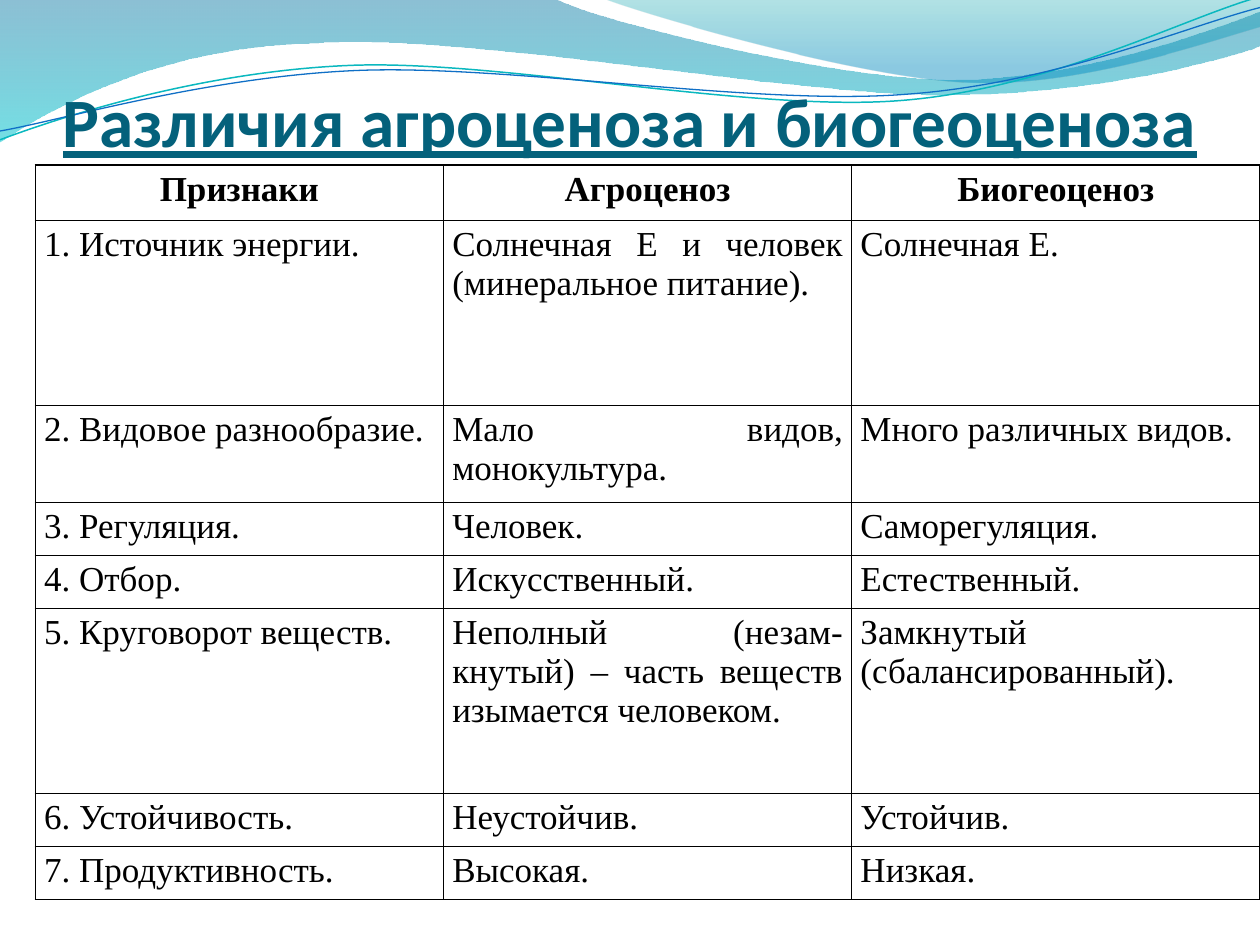
from lxml.etree import SubElement
from pptx import Presentation
from pptx.dml.color import RGBColor
from pptx.enum.text import MSO_ANCHOR, PP_ALIGN
from pptx.oxml.ns import qn
from pptx.util import Inches, Pt

# Content
TITLE = "Различия агроценоза и биогеоценоза"
HEADER = ("Признаки", "Агроценоз", "Биогеоценоз")
ROWS = [
    ("1. Источник энергии.", "Солнечная Е и человек (минеральное питание).", "Солнечная Е."),
    ("2. Видовое разнообразие.", "Мало видов, монокультура.", "Много различных видов."),
    ("3. Регуляция.", "Человек.", "Саморегуляция."),
    ("4. Отбор.", "Искусственный.", "Естественный."),
    ("5. Круговорот веществ.",
     "Неполный (незам-кнутый) – часть веществ изымается человеком.",
     "Замкнутый (сбалансированный)."),
    ("6. Устойчивость.", "Неустойчив.", "Устойчив."),
    ("7. Продуктивность.", "Высокая.", "Низкая."),
]
LEFT_ALIGNED = "5. Круговорот веществ."

# Layout in inches
WIDTH, HEIGHT = 10, 7.5
TABLE_LEFT, TABLE_TOP = 0.28, 1.31
ROW_HEIGHTS = (0.44, 1.47, 0.77, 0.42, 0.42, 1.47, 0.42, 0.42)

# Waves: a step of one point is straight, a step of three is a Bézier curve
WAVES = [
    {"start": (0, 0),
     "steps": [[(4.4, -0.01)],
               [(4.76, 0.17), (6.64, 0.63), (7.58, 0.63)],
               [(8.53, 0.63), (9.58, 0.26), (10, 0.09)],
               [(10.01, 0.36)],
               [(9.83, 0.44), (8.7, 0.76), (7.46, 0.75)],
               [(6.22, 0.75), (3.82, 0.28), (2.57, 0.34)],
               [(1.29, 0.36), (0.46, 0.83), (-0.01, 1.13)],
               [(0, 0)]],
     "stops": [(0, "0074A1", 45), (100, "00C6CF", 55)]},
    {"start": (4.79, -0.01),
     "steps": [[(5.09, 0.11), (6.82, 0.62), (7.69, 0.65)],
               [(8.56, 0.69), (9.61, 0.32), (10, 0.21)],
               [(10, 0)],
               [(4.79, -0.01)]],
     "stops": [(0, "00A1A9", 30), (80, "008BBF", 45)]},
    {"start": (0, 1.11),
     "steps": [[(0.48, 0.93), (1.58, 0.57), (2.77, 0.52)],
               [(3.95, 0.47), (5.93, 0.89), (7.13, 0.8)],
               [(8.33, 0.71), (9.38, 0.15), (9.98, -0.02)]],
     "line": ("0AB8BF", 0.85)},
    {"start": (0, 1.04),
     "steps": [[(0.47, 0.96), (1.64, 0.61), (2.83, 0.56)],
               [(4.03, 0.51), (5.97, 0.84), (7.17, 0.75)],
               [(8.36, 0.67), (9.41, 0.21), (10, 0.06)]],
     "line": ("0F6FC6", 0.75)},
]


def color(value):
    return RGBColor.from_string(value)


def emu(point):
    return tuple(int(Inches(length)) for length in point)


def bend_segments(shape, steps):
    """Turn the straight segments of curved steps into Bézier segments."""
    segments = list(shape._element.iter(qn("a:lnTo")))
    for segment, step in zip(segments, steps):
        if len(step) == 1:
            continue
        curve = segment.makeelement(qn("a:cubicBezTo"), {})
        for x, y in map(emu, step):
            SubElement(curve, qn("a:pt"), x=str(x - shape.left), y=str(y - shape.top))
        segment.getparent().replace(segment, curve)


def set_gradient(shape, stops):
    shape.fill.background()
    empty = shape._element.spPr.find(qn("a:noFill"))
    gradient = empty.makeelement(qn("a:gradFill"), {"rotWithShape": "1"})
    stop_list = SubElement(gradient, qn("a:gsLst"))
    for position, value, opacity in stops:
        stop = SubElement(stop_list, qn("a:gs"), pos=str(position * 1000))
        tint = SubElement(stop, qn("a:srgbClr"), val=value)
        SubElement(tint, qn("a:alpha"), val=str(opacity * 1000))
    SubElement(gradient, qn("a:lin"), ang="5400000", scaled="0")
    empty.getparent().replace(empty, gradient)


def add_wave(page, wave):
    ends = [emu(step[-1]) for step in wave["steps"]]
    builder = page.shapes.build_freeform(*emu(wave["start"]), scale=1.0)
    builder.add_line_segments(ends, close="stops" in wave)
    shape = builder.convert_to_shape()
    bend_segments(shape, wave["steps"])
    shape.shadow.inherit = False
    if "stops" in wave:
        set_gradient(shape, wave["stops"])
        shape.line.fill.background()
    else:
        value, width = wave["line"]
        shape.fill.background()
        shape.line.color.rgb = color(value)
        shape.line.width = Pt(width)


def add_span(para, text, font, size, value, bold=False, underline=False):
    span = para.add_run()
    span.text = text
    span.font.name = font
    span.font.size = Pt(size)
    span.font.bold = bold
    span.font.underline = underline
    span.font.color.rgb = color(value)


def add_title(page):
    box = page.shapes.add_textbox(Inches(0.5), Inches(0.77), Inches(9), Inches(1.25))
    frame = box.text_frame
    frame.word_wrap = True
    frame.vertical_anchor = MSO_ANCHOR.BOTTOM
    frame.margin_left = frame.margin_right = 0
    frame.margin_top, frame.margin_bottom = Inches(0.05), Inches(0.74)
    add_span(frame.paragraphs[0], TITLE, "Calibri", 39.6, "04617B", True, True)


def style_cell(cell):
    cell.margin_left = cell.margin_right = Inches(0.07)
    cell.margin_top = cell.margin_bottom = Inches(0.04)
    properties = cell._tc.get_or_add_tcPr()
    for side in ("lnL", "lnR", "lnT", "lnB"):
        line = SubElement(properties, qn("a:" + side), w=str(Pt(1)))
        fill = SubElement(line, qn("a:solidFill"))
        SubElement(fill, qn("a:srgbClr"), val="000000")
    cell.fill.background()


def add_comparison(page):
    content = [HEADER] + ROWS
    frame = page.shapes.add_table(len(content), len(HEADER), Inches(TABLE_LEFT),
                                  Inches(TABLE_TOP), Inches(WIDTH - TABLE_LEFT),
                                  Inches(sum(ROW_HEIGHTS)))
    table = frame.table
    table.first_row = table.horz_banding = False
    for column in table.columns:
        column.width = Inches((WIDTH - TABLE_LEFT) / len(HEADER))
    for r, (texts, height) in enumerate(zip(content, ROW_HEIGHTS)):
        table.rows[r].height = Inches(height)
        for c, text in enumerate(texts):
            cell = table.cell(r, c)
            style_cell(cell)
            para = cell.text_frame.paragraphs[0]
            if r == 0:
                para.alignment = PP_ALIGN.CENTER
            elif text == LEFT_ALIGNED:
                para.alignment = PP_ALIGN.LEFT
            else:
                para.alignment = PP_ALIGN.JUSTIFY
            add_span(para, text, "Times New Roman", 20, "000000", bold=r == 0)


def main():
    deck = Presentation()
    deck.slide_width, deck.slide_height = Inches(WIDTH), Inches(HEIGHT)
    page = deck.slides.add_slide(deck.slide_layouts[6])
    page.background.fill.solid()
    page.background.fill.fore_color.rgb = color("FFFFFF")
    for wave in WAVES:
        add_wave(page, wave)
    add_title(page)
    add_comparison(page)
    deck.save("out.pptx")


if __name__ == "__main__":
    main()
